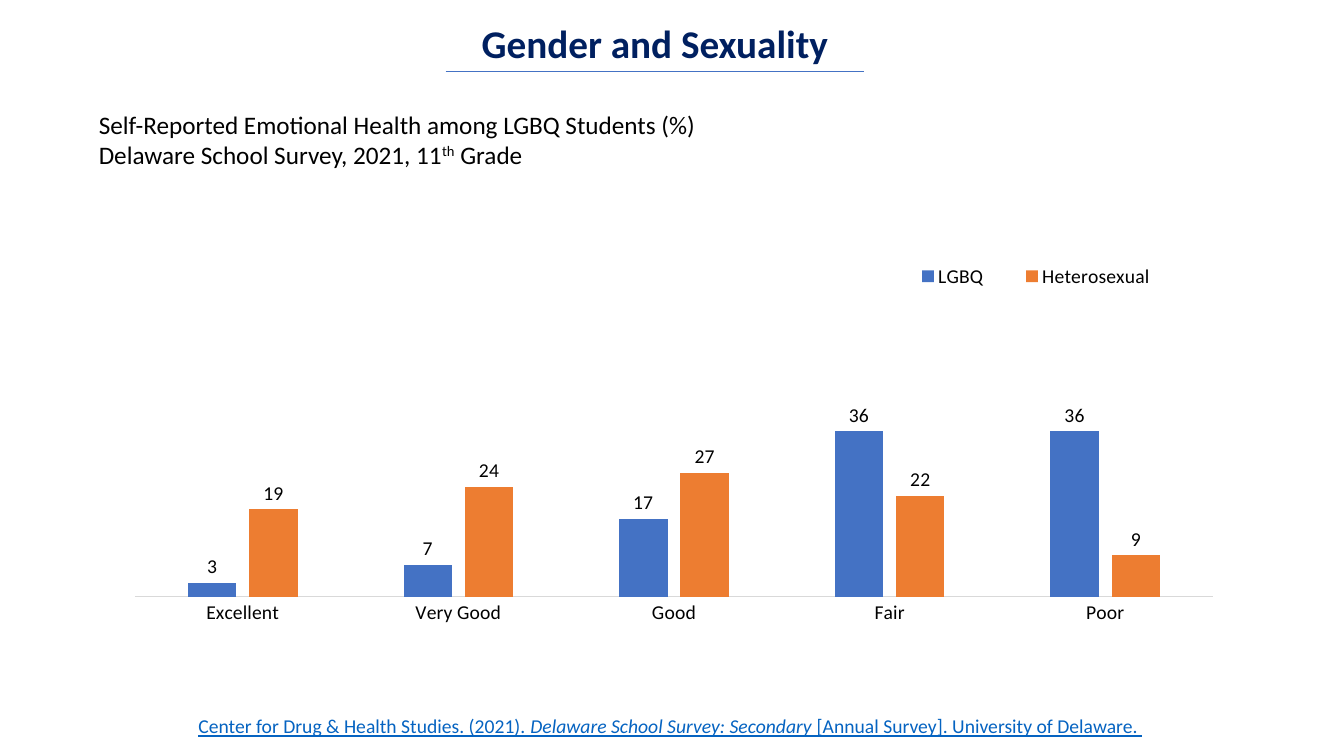
import lxml.etree
import pptx
import pptx.chart.data
import pptx.dml.color
import pptx.enum.chart
import pptx.enum.shapes
import pptx.enum.text
import pptx.oxml.ns
import pptx.util
from pptx.util import Cm, Pt

NAVY = pptx.dml.color.RGBColor(0x00, 0x20, 0x60)
BLUE = pptx.dml.color.RGBColor(0x44, 0x72, 0xC4)
ORANGE = pptx.dml.color.RGBColor(0xED, 0x7D, 0x31)
LINK_BLUE = pptx.dml.color.RGBColor(0x05, 0x63, 0xC1)
BLACK = pptx.dml.color.RGBColor(0x00, 0x00, 0x00)
AXIS_GREY = pptx.dml.color.RGBColor(0xD9, 0xD9, 0xD9)

RATINGS = ["Excellent", "Very Good", "Good", "Fair", "Poor"]
GROUPS = [
    ("LGBQ", [3, 7, 17, 36, 36], BLUE),
    ("Heterosexual ", [19, 24, 27, 22, 9], ORANGE),
]


def style_font(font, size, color):
    font.name = "Calibri"
    font.size = Pt(size)
    font.color.rgb = color


def add_title(slide, text):
    title = slide.shapes.title
    title.left, title.top, title.width, title.height = Cm(7.65), Cm(0.36), Cm(17.7), Cm(1.45)
    title.text_frame.text = text
    title.text_frame.auto_size = pptx.enum.text.MSO_AUTO_SIZE.NONE
    title.text_frame.vertical_anchor = pptx.enum.text.MSO_ANCHOR.MIDDLE
    heading = title.text_frame.paragraphs[0]
    heading.alignment = pptx.enum.text.PP_ALIGN.CENTER
    style_font(heading.font, 28, NAVY)
    heading.font.bold = True


def add_rule(slide, left, right, y):
    rule = slide.shapes.add_connector(
        pptx.enum.shapes.MSO_CONNECTOR.STRAIGHT, left, y, right, y)
    rule.line.color.rgb = BLUE
    rule.line.width = Pt(0.5)
    lxml.etree.SubElement(rule._element.spPr, pptx.oxml.ns.qn("a:effectLst"))


def add_text(slide, left, top, width, height, lines, size, color, wrap):
    frame = slide.shapes.add_textbox(left, top, width, height).text_frame
    frame.word_wrap = wrap
    for index, pieces in enumerate(lines):
        paragraph = frame.add_paragraph() if index else frame.paragraphs[0]
        style_font(paragraph.font, size, color)
        for piece in pieces:
            paragraph.add_run().text = piece
    return frame.paragraphs


def add_survey_heading(slide):
    lines = [
        ["Self-Reported Emotional Health among LGBQ Students (%)"],
        ["Delaware School Survey, 2021, 11", "th", " Grade"],
    ]
    survey = add_text(slide, Cm(2.24), Cm(2.62), Cm(15.75), Cm(1.8), lines, 18, BLACK, False)[1]
    survey.runs[1]._r.get_or_add_rPr().set("baseline", "30000")


def add_citation(slide):
    pieces = [
        "Center for Drug & Health Studies. (2021). ",
        "Delaware School Survey: Secondary",
        " [Annual Survey]. University of Delaware. ",
    ]
    citation = add_text(slide, Cm(4.6), Cm(17.83), Cm(29.26), Cm(0.86), [pieces], 14, LINK_BLUE, True)[0]
    citation.font.underline = True
    citation.line_spacing = 1.07
    citation.runs[1].font.italic = True
    properties = citation._p.get_or_add_pPr()
    properties.set("marL", str(int(Cm(0.15))))
    properties.set("indent", "0")


def make_layout(x, y, width, height, inner=False):
    qn = pptx.oxml.ns.qn
    layout = lxml.etree.Element(qn("c:layout"))
    manual = lxml.etree.SubElement(layout, qn("c:manualLayout"))
    settings = [("layoutTarget", "inner")] if inner else []
    settings += [("xMode", "edge"), ("yMode", "edge"),
                 ("x", x), ("y", y), ("w", width), ("h", height)]
    for tag, value in settings:
        lxml.etree.SubElement(manual, qn("c:" + tag)).set("val", str(value))
    return layout


def place_after(parent, previous, layout):
    for old in parent.findall(pptx.oxml.ns.qn("c:layout")):
        parent.remove(old)
    if previous is None:
        parent.insert(0, layout)
    else:
        previous.addnext(layout)


def style_axes(chart):
    ratings = chart.category_axis
    ratings.major_tick_mark = pptx.enum.chart.XL_TICK_MARK.NONE
    ratings.format.line.color.rgb = AXIS_GREY
    ratings.format.line.width = Pt(0.75)
    style_font(ratings.tick_labels.font, 14, BLACK)
    percent = chart.value_axis
    percent.minimum_scale = 0
    percent.maximum_scale = 75
    percent.has_major_gridlines = False
    percent.visible = False


def style_legend(chart):
    chart.has_legend = True
    legend = chart.legend
    legend.position = pptx.enum.chart.XL_LEGEND_POSITION.RIGHT
    legend.include_in_layout = False
    style_font(legend.font, 14, BLACK)
    element = legend._element
    position = element.find(pptx.oxml.ns.qn("c:legendPos"))
    place_after(element, position, make_layout(0.69, 0.13, 0.27, 0.09))


def add_health_chart(slide):
    data = pptx.chart.data.CategoryChartData()
    data.categories = RATINGS
    for name, values, _ in GROUPS:
        data.add_series(name, values)
    chart = slide.shapes.add_chart(
        pptx.enum.chart.XL_CHART_TYPE.COLUMN_CLUSTERED,
        Cm(2.72), Cm(4.9), Cm(28.42), Cm(11.79), data).chart
    chart.has_title = False
    style_font(chart.font, 10, BLACK)
    plot = chart.plots[0]
    plot.gap_width = 219
    plot.overlap = -27
    plot.vary_by_categories = False
    for series, (_, _, color) in zip(plot.series, GROUPS):
        series.format.fill.solid()
        series.format.fill.fore_color.rgb = color
        labels = series.data_labels
        labels.show_value = True
        labels.position = pptx.enum.chart.XL_LABEL_POSITION.OUTSIDE_END
        style_font(labels.font, 14, BLACK)
    style_axes(chart)
    style_legend(chart)
    plot_area = chart._chartSpace.chart.plotArea
    place_after(plot_area, None, make_layout(0.024, 0.124, 0.956, 0.736, inner=True))


def main():
    presentation = pptx.Presentation()
    presentation.slide_width = Cm(33.87)
    presentation.slide_height = Cm(19.05)
    slide = presentation.slides.add_slide(presentation.slide_layouts[5])
    add_title(slide, "Gender and Sexuality")
    add_rule(slide, Cm(11.23), Cm(21.77), Cm(1.8))
    add_survey_heading(slide)
    add_health_chart(slide)
    add_citation(slide)
    presentation.save("out.pptx")


if __name__ == "__main__":
    main()
